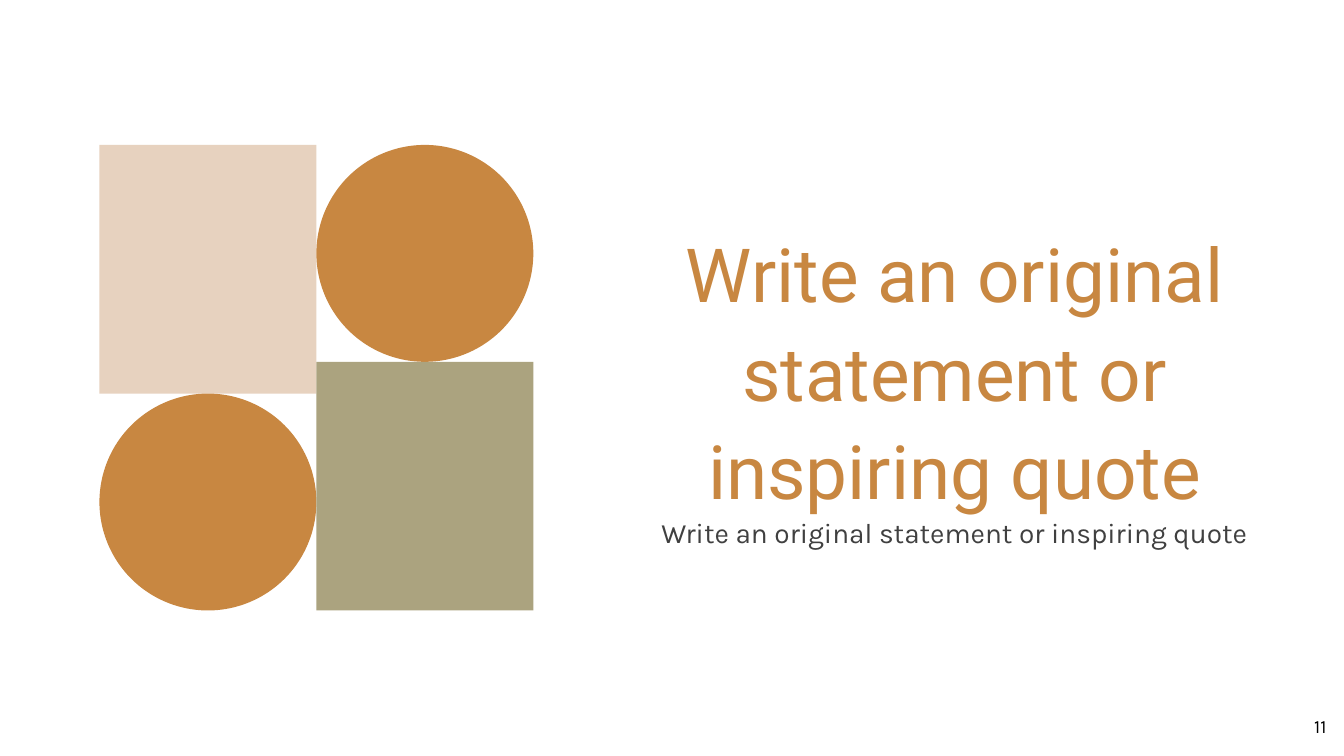
from pptx import Presentation
from pptx.dml.color import RGBColor
from pptx.enum.shapes import MSO_SHAPE
from pptx.enum.text import MSO_ANCHOR, MSO_AUTO_SIZE, PP_ALIGN
from pptx.util import Cm, Pt

RECT, OVAL = MSO_SHAPE.RECTANGLE, MSO_SHAPE.OVAL
CENTER, RIGHT = PP_ALIGN.CENTER, PP_ALIGN.RIGHT
TOP, MIDDLE = MSO_ANCHOR.TOP, MSO_ANCHOR.MIDDLE
GROW, FIXED = MSO_AUTO_SIZE.SHAPE_TO_FIT_TEXT, MSO_AUTO_SIZE.NONE

OCHRE, SAND, SAGE = "C88741", "E7D2BF", "ABA37F"
QUOTE = "Write an original statement or inspiring quote"

LEFT, UPPER, COL_W = 1.88, 2.74, 4.1
HEIGHTS = {RECT: 4.7, OVAL: COL_W}
COLUMNS = [
    [(RECT, SAND), (OVAL, OCHRE)],
    [(OVAL, OCHRE), (RECT, SAGE)],
]

TEXTS = [
    (QUOTE, (12.12, 4.14, 11.84, 5.46), "Roboto", 40, OCHRE, CENTER, 1.1, TOP, GROW),
    (QUOTE, (12.12, 9.5, 11.84, 0.64), "Karla", 15, "404040", CENTER, 1.4, TOP, GROW),
    ("11", (23.55, 13.18, 1.52, 1.1), "Karla", 10, "000000", RIGHT, 1.0, MIDDLE, FIXED),
]


def rgb(color):
    return RGBColor.from_string(color)


def add_block(s, kind, color, x, y):
    sp = s.shapes.add_shape(kind, Cm(x), Cm(y), Cm(COL_W), Cm(HEIGHTS[kind]))
    sp.shadow.inherit = False
    sp.fill.solid()
    sp.fill.fore_color.rgb = rgb(color)
    sp.line.fill.background()


def add_text(s, text, box, font, size, color, align, spacing, anchor, fit):
    tf = s.shapes.add_textbox(*map(Cm, box)).text_frame
    tf.margin_left = tf.margin_right = tf.margin_top = tf.margin_bottom = 0
    tf.word_wrap = True
    tf.auto_size = fit
    tf.vertical_anchor = anchor
    p = tf.paragraphs[0]
    p.alignment = align
    p.line_spacing = spacing
    r = p.add_run()
    r.text = text
    r.font.name = font
    r.font.size = Pt(size)
    r.font.color.rgb = rgb(color)


def main():
    prs = Presentation()
    prs.slide_width, prs.slide_height = Cm(25.4), Cm(14.29)
    s = prs.slides.add_slide(prs.slide_layouts[6])
    for i, column in enumerate(COLUMNS):
        y = UPPER
        for kind, color in column:
            add_block(s, kind, color, LEFT + i * COL_W, y)
            y += HEIGHTS[kind]
    for item in TEXTS:
        add_text(s, *item)
    prs.save("out.pptx")


if __name__ == "__main__":
    main()
